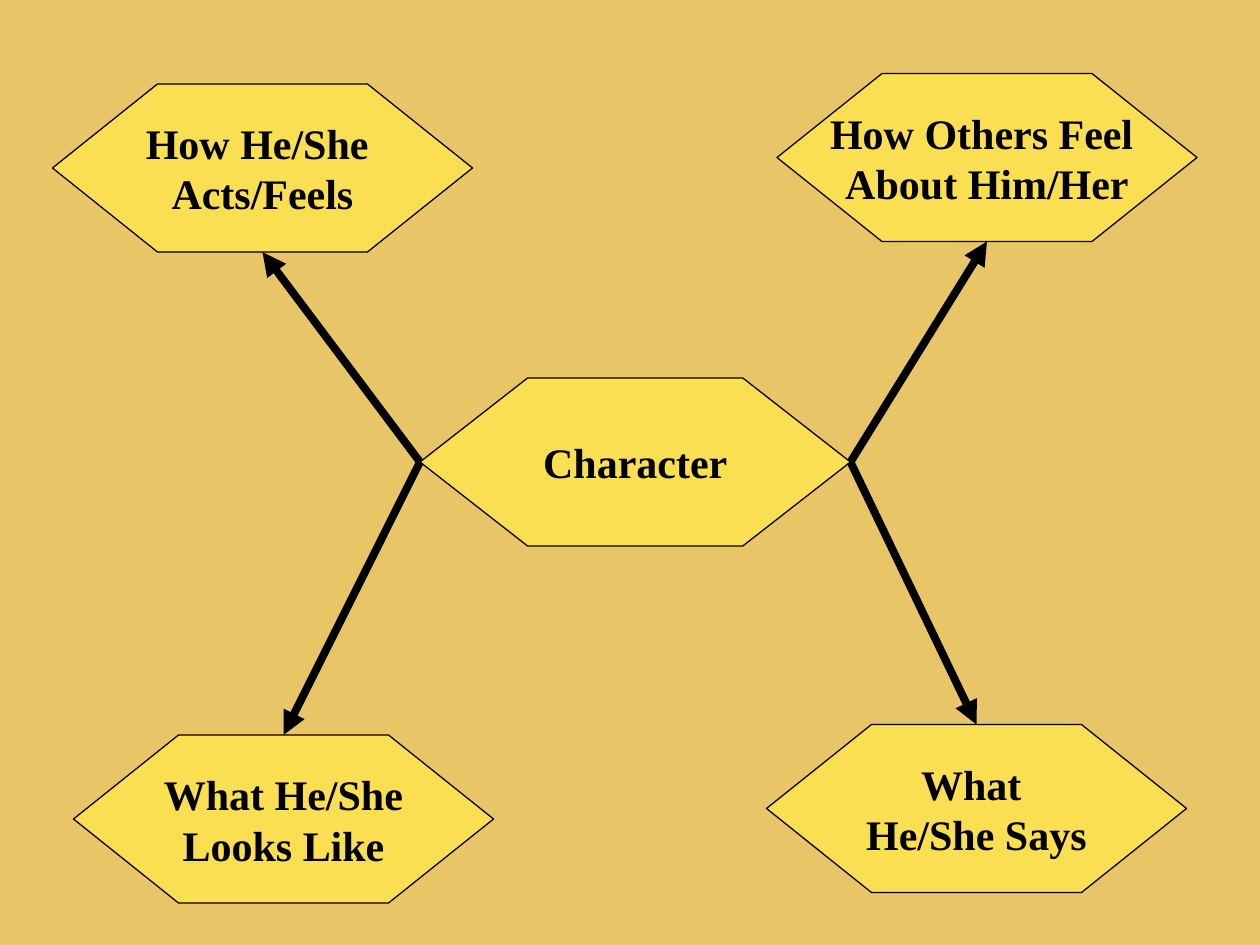
import pptx
import pptx.util
import pptx.dml.color
import pptx.enum.shapes
import pptx.enum.text
import pptx.oxml
import pptx.oxml.ns

PX = 7620  # EMU per px, 120 px to the inch
COLORS = {"background": "E8C567", "hexagon": "FBDF53", "ink": "000000"}
FONT = "Times New Roman"
HEIGHT = 160

# Hexagons: text, left, top, width
CENTER = ("Character", 400, 360, 410)
# Outer hexagons, with the side of the center their arrow leaves from and the side it reaches
TRAITS = [
    (("How He/She \nActs/Feels", 50, 80, 400), "left", "bottom"),
    (("What He/She\nLooks Like", 70, 700, 400), "left", "top"),
    (("How Others Feel \nAbout Him/Her", 740, 70, 400), "right", "bottom"),
    (("What \nHe/She Says", 730, 690, 400), "right", "top"),
]


def color(name):
    return pptx.dml.color.RGBColor.from_string(COLORS[name])


def side_point(hexagon, side):
    _, left, top, width = hexagon
    return {
        "left": (left, top + HEIGHT // 2),
        "right": (left + width, top + HEIGHT // 2),
        "top": (left + width // 2, top),
        "bottom": (left + width // 2, top + HEIGHT),
    }[side]


def add_hexagon(slide, text, left, top, width):
    shape = slide.shapes.add_shape(
        pptx.enum.shapes.MSO_SHAPE.HEXAGON,
        left * PX, top * PX, width * PX, HEIGHT * PX)
    shape.adjustments[0] = width / 4 / HEIGHT  # corners at a quarter of the width
    shape.shadow.inherit = False
    shape.fill.solid()
    shape.fill.fore_color.rgb = color("hexagon")
    shape.line.color.rgb = color("ink")
    shape.line.width = pptx.util.Pt(0.75)
    frame = shape.text_frame
    frame.word_wrap = False
    frame.vertical_anchor = pptx.enum.text.MSO_ANCHOR.MIDDLE
    frame.text = text
    for paragraph in frame.paragraphs:
        paragraph.alignment = pptx.enum.text.PP_ALIGN.CENTER
        for run in paragraph.runs:
            run.font.name = FONT
            run.font.size = pptx.util.Pt(24)
            run.font.bold = True
            run.font.color.rgb = color("ink")


def add_arrow(slide, start, end):
    connector = slide.shapes.add_connector(
        pptx.enum.shapes.MSO_CONNECTOR.STRAIGHT,
        *(value * PX for value in start + end))
    connector.line.color.rgb = color("ink")
    connector.line.width = pptx.util.Pt(4.5)
    properties = connector.element.spPr
    line = properties.find(pptx.oxml.ns.qn("a:ln"))
    namespace = pptx.oxml.ns.nsdecls("a")
    line.append(pptx.oxml.parse_xml(f'<a:tailEnd {namespace} type="triangle"/>'))
    properties.append(pptx.oxml.parse_xml(f"<a:effectLst {namespace}/>"))


def main():
    presentation = pptx.Presentation()
    presentation.slide_width = 1200 * PX
    presentation.slide_height = 900 * PX
    slide = presentation.slides.add_slide(presentation.slide_layouts[6])
    slide.background.fill.solid()
    slide.background.fill.fore_color.rgb = color("background")

    # Hexagons
    add_hexagon(slide, *CENTER)
    for trait, _, _ in TRAITS:
        add_hexagon(slide, *trait)

    # Arrows from the center to each trait
    for trait, from_side, to_side in TRAITS:
        add_arrow(slide, side_point(CENTER, from_side), side_point(trait, to_side))

    presentation.save("out.pptx")


if __name__ == "__main__":
    main()
